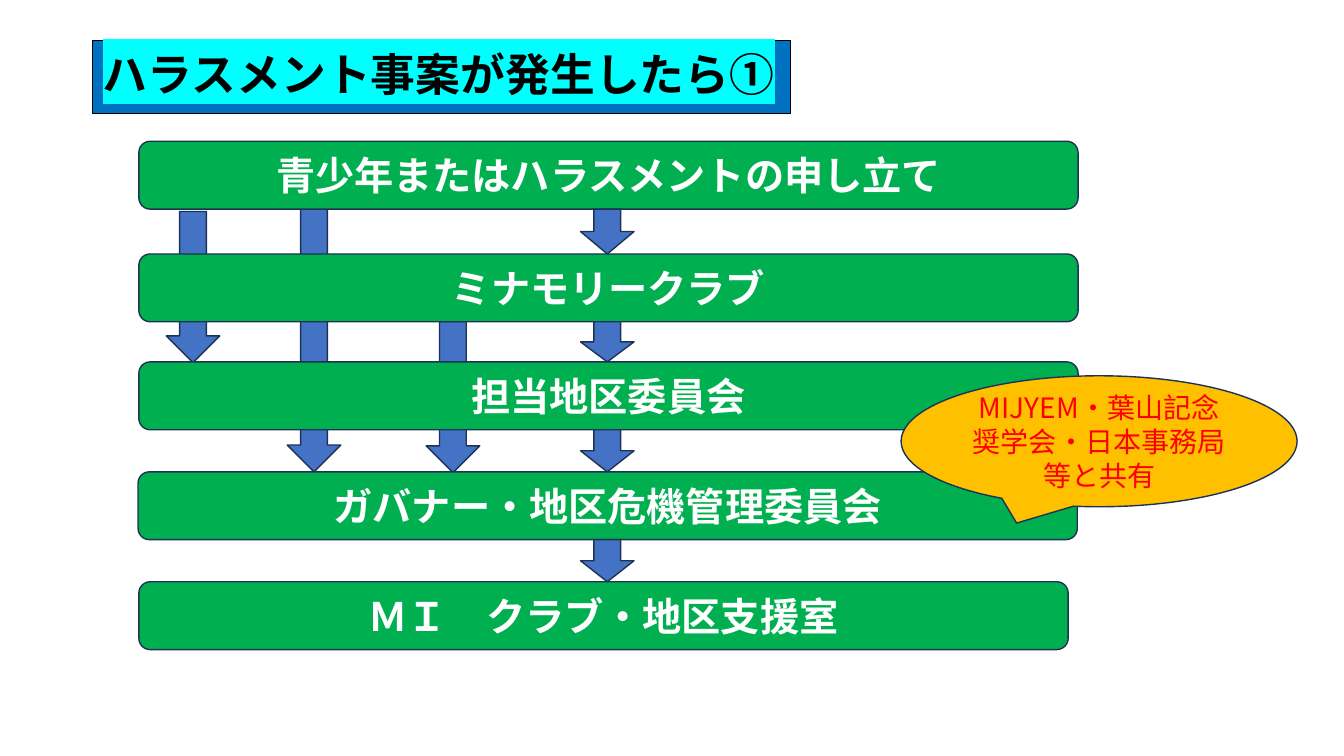
import pptx
import pptx.dml.color
import pptx.enum.shapes
import pptx.enum.text
import pptx.oxml.ns
import pptx.util
from lxml import etree

Cm = pptx.util.Cm
Pt = pptx.util.Pt
RGBColor = pptx.dml.color.RGBColor
Shape = pptx.enum.shapes.MSO_SHAPE
Align = pptx.enum.text.PP_ALIGN
qn = pptx.oxml.ns.qn

FONT = "Noto Sans CJK JP"
BLACK = RGBColor(0x00, 0x00, 0x00)
WHITE = RGBColor(0xFF, 0xFF, 0xFF)
RED = RGBColor(0xFF, 0x00, 0x00)
CYAN = RGBColor(0x00, 0xFF, 0xFF)
TITLE_BLUE = RGBColor(0x00, 0x70, 0xC0)
ARROW_BLUE = RGBColor(0x44, 0x72, 0xC4)
GREEN = RGBColor(0x00, 0xB0, 0x50)
ORANGE = RGBColor(0xFF, 0xC0, 0x00)
OUTLINE = RGBColor(0x1E, 0x32, 0x56)

STEP_HEIGHT = 1.71
ARROW_WIDTH = 1.35
STEPS = [  # text, left, top, width
    ("青少年またはハラスメントの申し立て", 3.5, 3.56, 23.67),
    ("ミナモリークラブ", 3.5, 6.4, 23.67),
    ("担当地区委員会", 3.5, 9.12, 23.67),
    ("ガバナー・地区危機管理委員会", 3.48, 11.89, 23.67),
    ("ＭＩ　クラブ・地区支援室", 3.5, 14.66, 23.42),
]
BYPASSES = [  # left, top, height
    (4.19, 5.33, 3.81),
    (7.24, 5.26, 6.63),
    (10.74, 8.1, 3.81),
]

deck = pptx.Presentation()
deck.slide_width = Cm(33.87)
deck.slide_height = Cm(19.05)
slide = deck.slides.add_slide(deck.slide_layouts[5])


def add_outlined(kind, left, top, width, height, fill):
    shape = slide.shapes.add_shape(kind, Cm(left), Cm(top), Cm(width), Cm(height))
    shape.shadow.inherit = False
    shape.fill.solid()
    shape.fill.fore_color.rgb = fill
    shape.line.color.rgb = OUTLINE
    shape.line.width = Pt(1)
    return shape


def write(shape, text, size, color, bold, align):
    """Fill the shape with one vertically centred paragraph and return its run."""
    frame = shape.text_frame
    frame.text = text
    frame.word_wrap = True
    frame.auto_size = pptx.enum.text.MSO_AUTO_SIZE.NONE
    frame.vertical_anchor = pptx.enum.text.MSO_ANCHOR.MIDDLE
    frame.paragraphs[0].alignment = align
    run = frame.paragraphs[0].runs[0]
    run.font.size = Pt(size)
    run.font.bold = bold
    run.font.color.rgb = color
    run.font.name = FONT
    east_asian = etree.Element(qn("a:ea"), typeface=FONT)
    run.font._element.find(qn("a:latin")).addnext(east_asian)
    return run


title = slide.shapes.title
title.left, title.top, title.width, title.height = Cm(2.34), Cm(1.02), Cm(17.58), Cm(1.83)
title.fill.solid()
title.fill.fore_color.rgb = TITLE_BLUE
title.line.color.rgb = BLACK
title.line.width = Pt(0.75)
heading = write(title, "ハラスメント事案が発生したら①", 32, BLACK, True, Align.LEFT)
title.text_frame.paragraphs[0].line_spacing = 0.9
highlight = etree.Element(qn("a:highlight"))
etree.SubElement(highlight, qn("a:srgbClr"), val=str(CYAN))
heading.font._element.find(qn("a:solidFill")).addnext(highlight)

for left, top, height in BYPASSES:
    add_outlined(Shape.DOWN_ARROW, left, top, ARROW_WIDTH, height, ARROW_BLUE)

for text, left, top, width in STEPS:
    step = add_outlined(Shape.ROUNDED_RECTANGLE, left, top, width, STEP_HEIGHT, GREEN)
    write(step, text, 28, WHITE, True, Align.CENTER)

sharing = add_outlined(Shape.OVAL_CALLOUT, 22.71, 9.47, 9.98, 3.3, ORANGE)
write(sharing, "MIJYEM・葉山記念奨学会・日本事務局等と共有", 20, RED, False, Align.CENTER)

for upper, lower in zip(STEPS, STEPS[1:]):
    start = upper[2] + STEP_HEIGHT
    add_outlined(Shape.DOWN_ARROW, 14.63, start, ARROW_WIDTH, lower[2] - start, ARROW_BLUE)

deck.save("out.pptx")
